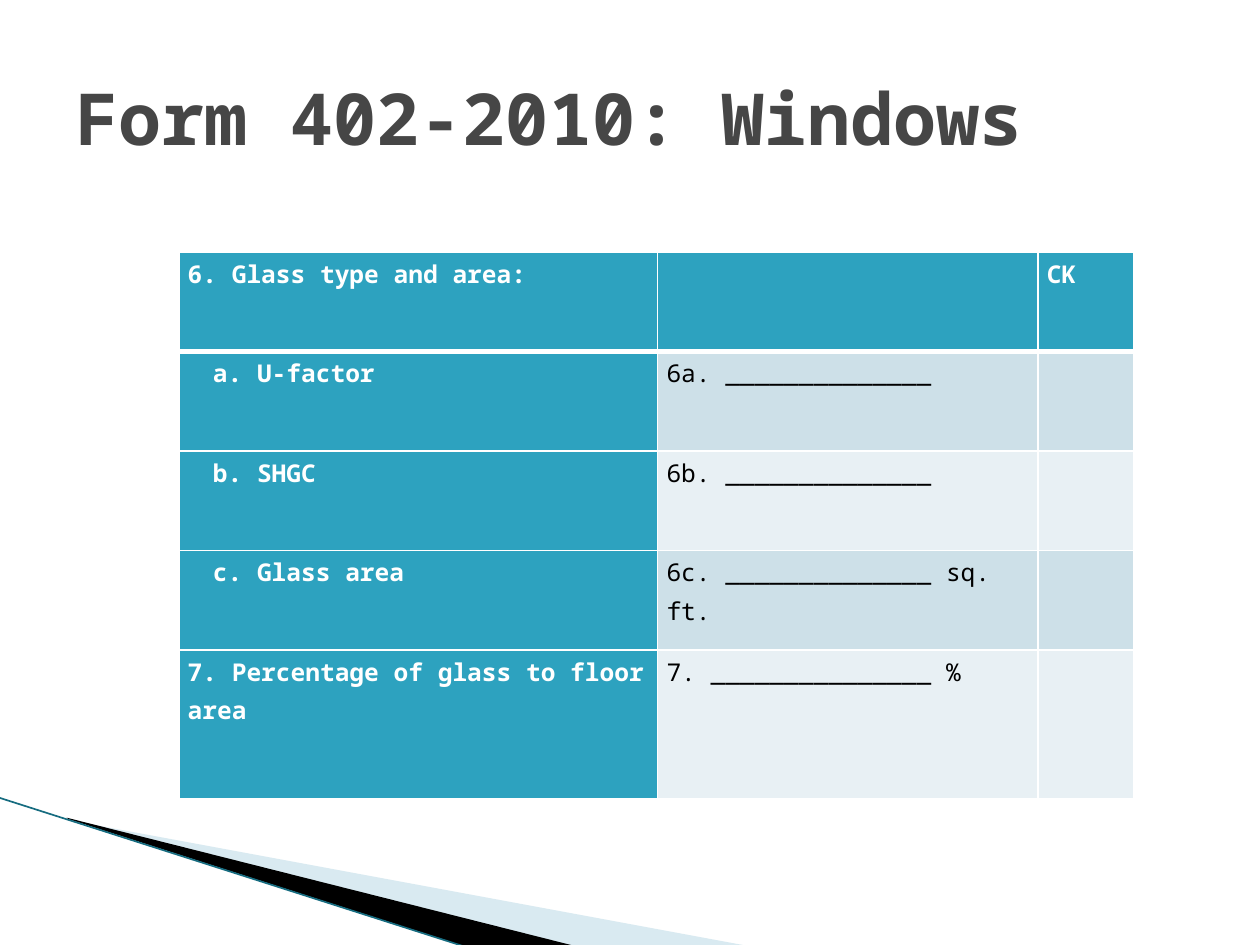
from lxml import etree
from pptx import Presentation
from pptx.dml.color import RGBColor
from pptx.enum.shapes import MSO_CONNECTOR
from pptx.enum.text import MSO_ANCHOR, MSO_AUTO_SIZE, PP_ALIGN
from pptx.oxml.ns import qn
from pptx.util import Inches, Pt

STRAIGHT = MSO_CONNECTOR.STRAIGHT
MIDDLE = MSO_ANCHOR.MIDDLE
NO_AUTOFIT = MSO_AUTO_SIZE.NONE
LEFT = PP_ALIGN.LEFT

WHITE = RGBColor(0xFF, 0xFF, 0xFF)
BLACK = RGBColor(0x00, 0x00, 0x00)
GRAY = RGBColor(0x46, 0x46, 0x46)
TEAL = RGBColor(0x2D, 0xA2, 0xBF)
DARK_TEAL = RGBColor(0x16, 0x6C, 0x80)
SOFT_BLUE = RGBColor(0xA0, 0xCB, 0xDC)
BAND_DARK = RGBColor(0xCD, 0xE0, 0xE8)
BAND_LIGHT = RGBColor(0xE8, 0xF0, 0xF4)

FONT = "Noto Sans Mono"
COLUMN_WIDTHS = (3.8, 3.02, 0.76)
ROW_HEIGHTS = (0.79, 0.79, 0.79, 0.79, 1.18)
FORM_ROWS = (
    ("6. Glass type and area:", "", "CK"),
    ("a. U-factor", "6a. ______________", ""),
    ("b. SHGC", "6b. ______________", ""),
    ("c. Glass area", "6c. ______________ sq. ft.", ""),
    ("7. Percentage of glass to floor area", "7. _______________ %", ""),
)


def write_text(frame, text, size=14, color=BLACK, bold=False, spacing=None, indent=0):
    para = frame.paragraphs[0]
    para.alignment = LEFT
    if spacing:
        para.line_spacing = spacing
    if indent:
        properties = para._p.get_or_add_pPr()
        properties.set("marL", str(Inches(indent)))
        properties.set("indent", "0")
    span = para.add_run()
    span.text = text
    span.font.name = FONT
    span.font.size = Pt(size)
    span.font.bold = bold
    span.font.color.rgb = color


def set_borders(cell, bottom_width):
    properties = cell._tc.get_or_add_tcPr()
    for side, width in (("L", 1), ("R", 1), ("T", 1), ("B", bottom_width)):
        line = etree.SubElement(properties, qn(f"a:ln{side}"), w=str(Pt(width)))
        fill = etree.SubElement(line, qn("a:solidFill"))
        etree.SubElement(fill, qn("a:srgbClr"), val=str(WHITE))


class SlideBuilder:
    def __init__(self, deck):
        self.page = deck.slides.add_slide(deck.slide_layouts[5])

    def title(self, text, left, top, width, height):
        box = self.page.shapes.title
        box.left, box.top = Inches(left), Inches(top)
        box.width, box.height = Inches(width), Inches(height)
        frame = box.text_frame
        frame.auto_size = NO_AUTOFIT
        frame.vertical_anchor = MIDDLE
        write_text(frame, text, size=41, color=GRAY, bold=True)

    def wedge(self, points, color, opacity=100):
        corners = [(Inches(x), Inches(y)) for x, y in points]
        builder = self.page.shapes.build_freeform(*corners[0])
        builder.add_line_segments(corners[1:], close=True)
        shape = builder.convert_to_shape()
        shape.shadow.inherit = False
        shape.fill.solid()
        shape.fill.fore_color.rgb = color
        shape.line.fill.background()
        if opacity < 100:
            tint = shape._element.spPr.find(".//" + qn("a:srgbClr"))
            etree.SubElement(tint, qn("a:alpha"), val=str(opacity * 1000))

    def line(self, start, end, color, width):
        ends = [Inches(value) for value in (*start, *end)]
        connector = self.page.shapes.add_connector(STRAIGHT, *ends)
        connector.line.color.rgb = color
        connector.line.width = Pt(width)
        etree.SubElement(connector._element.spPr, qn("a:effectLst"))

    def form_table(self, rows, left, top):
        size = Inches(sum(COLUMN_WIDTHS)), Inches(sum(ROW_HEIGHTS))
        table = self.page.shapes.add_table(
            len(rows), len(COLUMN_WIDTHS), Inches(left), Inches(top), *size).table
        table.first_col = True
        for column, width in zip(table.columns, COLUMN_WIDTHS):
            column.width = Inches(width)
        for row_index, values in enumerate(rows):
            table.rows[row_index].height = Inches(ROW_HEIGHTS[row_index])
            for column_index, text in enumerate(values):
                self.form_cell(table.cell(row_index, column_index),
                               text, row_index, column_index)

    def form_cell(self, cell, text, row_index, column_index):
        heading = row_index == 0 or column_index == 0
        band = BAND_DARK if row_index % 2 else BAND_LIGHT
        cell.margin_left = cell.margin_right = Inches(0.07)
        cell.margin_top = cell.margin_bottom = 0
        set_borders(cell, bottom_width=1 if row_index else 3)
        cell.fill.solid()
        cell.fill.fore_color.rgb = TEAL if heading else band
        if text:
            sub_item = column_index == 0 and text[0].isalpha()
            write_text(cell.text_frame, text, color=WHITE if heading else BLACK,
                       bold=heading, spacing=1.15, indent=0.2 if sub_item else 0)


def main():
    deck = Presentation()
    deck.slide_width, deck.slide_height = Inches(10), Inches(7.5)
    slide = SlideBuilder(deck)

    # Corner decoration
    slide.wedge([(0.55, 6.51), (5.95, 7.51), (4.56, 7.51), (0.55, 6.5)],
                SOFT_BLUE, opacity=40)
    slide.wedge([(0.53, 6.49), (4.57, 7.51), (3.72, 7.52), (0.54, 6.5)], BLACK)
    slide.line((-0.01, 6.33), (3.71, 7.52), DARK_TEAL, 0.95)

    # Title and form
    slide.title("Form 402-2010: Windows", 0.5, 0.3, 9, 1.25)
    slide.form_table(FORM_ROWS, 1.42, 2)

    deck.save("out.pptx")


if __name__ == "__main__":
    main()
